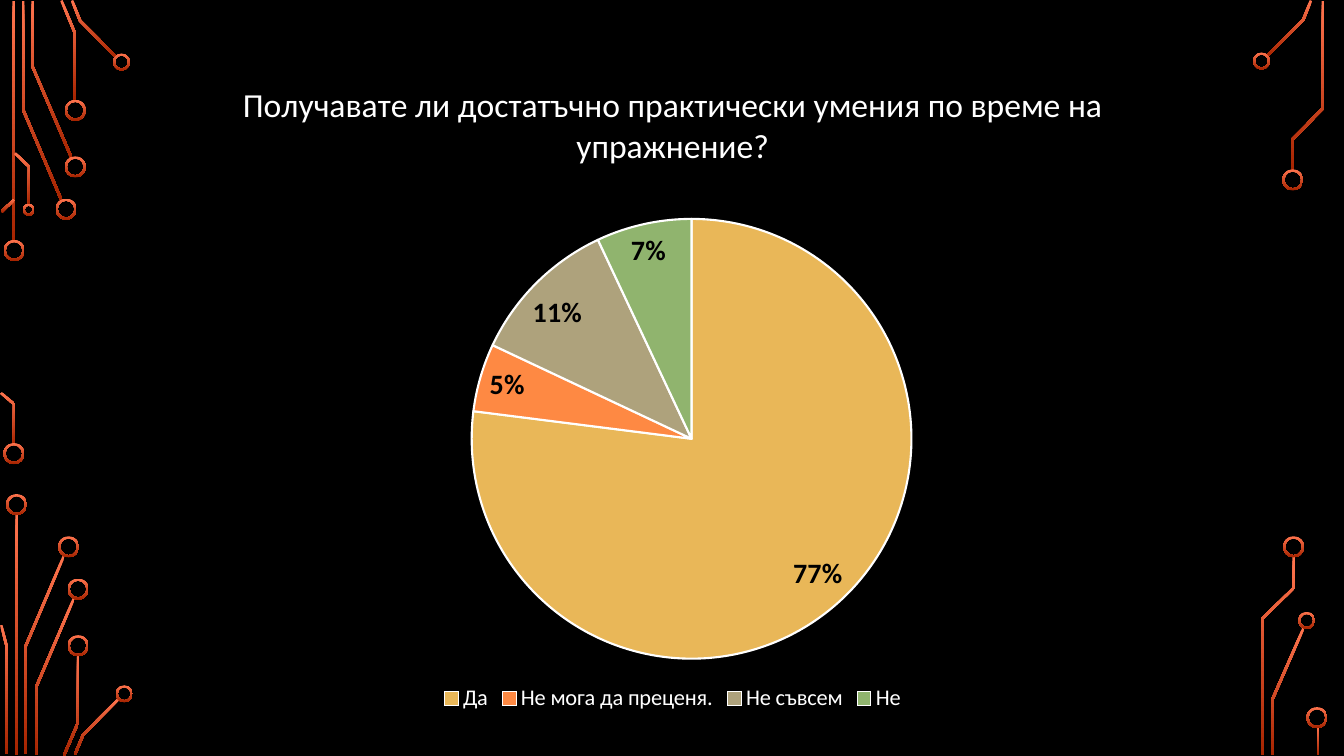
import math

import pptx
import pptx.chart.data
import pptx.dml.color
import pptx.enum.chart
import pptx.enum.shapes
import pptx.util

HUES = {
    "back": "000000", "text": "FFFFFF", "label": "000000",
    "top": "FF744E", "base": "A62400",
    "yes": "E9B758", "unsure": "FE8943", "partly": "AEA27C", "no": "90B46E",
}
FONT = "Calibri"
TITLE = "Получавате ли достатъчно практически умения по време на упражнение?"
VOTES = [("Да", 77, "yes"), ("Не мога да преценя.", 5, "unsure"),
         ("Не съвсем", 11, "partly"), ("Не", 7, "no")]

# Centre lines of the circuit traces, in points
TRACES = [
    # Top left
    [(9.7, 0.7), (9.7, 172.8)],
    [(16.6, 0.7), (16.6, 78.5), (43.9, 142.9)],
    [(23.4, 0.7), (23.4, 47.9), (51.1, 112.7)],
    [(43.9, 0.4), (53.6, 23.8), (53.6, 72)],
    [(51.5, 0.4), (57.2, 14.8), (83.2, 41)],
    [(1.1, 151.2), (10.1, 142.6)],
    [(10.8, 109.4), (20.9, 119.2), (20.9, 146.2)],
    # Bottom left
    [(0.7, 280.7), (10.1, 288.7), (10.1, 317.5)],
    [(11.9, 367.2), (11.9, 539.3)],
    [(45.7, 397.1), (18.4, 461.5), (18.4, 538.6)],
    [(0.9, 446.5), (4.7, 461.5), (4.7, 538.6)],
    [(52.9, 427.3), (25.6, 491.4), (25.6, 539.3)],
    [(55.8, 468), (55.8, 516.2), (45.7, 539.6)],
    [(85, 499), (59.4, 524.9), (53.6, 538.9)],
    # Top right
    [(936.4, 0.4), (931, 14), (905, 40)],
    [(945, 0.7), (945, 77.4), (923, 99.7), (923, 121.7)],
    # Bottom right
    [(924.1, 397.4), (924.1, 420.1), (901.8, 441.7), (901.8, 539.3)],
    [(931, 448.9), (909, 499.3), (909, 539.3)],
    [(941.4, 519.1), (941.4, 539.3)],
]

# Centres of the ring pads by diameter, in points
RINGS = {
    15: [(10.1, 178.9), (9.9, 324), (47.2, 149.4), (53.8, 119.2), (53.8, 78.8),
         (11.8, 360.4), (49, 390.6), (55.8, 420.8), (55.8, 461.2),
         (923.4, 128.5), (924, 390.6), (940.7, 512.6)],
    12.2: [(86.8, 44.3), (88.8, 495.6), (901.1, 43.6), (933.4, 443.2)],
    8.6: [(20.5, 149.8)],
}


def hue(name):
    return pptx.dml.color.RGBColor.from_string(HUES[name])


def edge(line, half):
    """Shift a line sideways by half its width, with mitred corners."""
    norms = []
    for (x1, y1), (x2, y2) in zip(line, line[1:]):
        size = math.hypot(x2 - x1, y2 - y1)
        norms.append(((y1 - y2) / size, (x2 - x1) / size))
    pairs = zip(line, norms[:1] + norms, norms + norms[-1:])
    for (x, y), (ax, ay), (bx, by) in pairs:
        step = half / (1 + ax * bx + ay * by)
        yield x + (ax + bx) * step, y + (ay + by) * step


class Page:
    def __init__(self, deck):
        self.slide = deck.slides.add_slide(deck.slide_layouts[6])
        self.shapes = self.slide.shapes
        self.thick = 1.8
        self.rim = 1.5
        fill = self.slide.background.fill
        fill.solid()
        fill.fore_color.rgb = hue("back")

    def glow(self, shape):
        shape.shadow.inherit = False
        shape.line.fill.background()
        shape.fill.gradient()
        shape.fill.gradient_angle = 270
        for stop, name in zip(shape.fill.gradient_stops, ("top", "base")):
            stop.color.rgb = hue(name)

    def trace(self, line):
        half = self.thick / 2
        rim = list(edge(line, half)) + list(edge(line, -half))[::-1]
        dots = [(pptx.util.Pt(x), pptx.util.Pt(y)) for x, y in rim]
        form = self.shapes.build_freeform(*dots[0], scale=1.0)
        form.add_line_segments(dots[1:], close=True)
        self.glow(form.convert_to_shape())

    def ring(self, x, y, size):
        pad = self.shapes.add_shape(
            pptx.enum.shapes.MSO_SHAPE.DONUT,
            pptx.util.Pt(x - size / 2), pptx.util.Pt(y - size / 2),
            pptx.util.Pt(size), pptx.util.Pt(size))
        pad.adjustments[0] = self.rim / size
        self.glow(pad)

    def style(self, font, size, name="text", bold=False):
        font.name = FONT
        font.size = pptx.util.Pt(size)
        font.bold = bold
        font.color.rgb = hue(name)

    def pie(self, left, top, width, height):
        data = pptx.chart.data.CategoryChartData()
        data.categories = [vote[0] for vote in VOTES]
        data.add_series("Series 1", [vote[1] for vote in VOTES])
        chart = self.shapes.add_chart(
            pptx.enum.chart.XL_CHART_TYPE.PIE,
            pptx.util.Pt(left), pptx.util.Pt(top),
            pptx.util.Pt(width), pptx.util.Pt(height), data).chart
        self.style(chart.font, 10)

        # Title
        chart.has_title = True
        head = chart.chart_title.text_frame
        head.text = TITLE
        self.style(head.paragraphs[0].font, 24)
        chart.chart_title.include_in_layout = False

        # Legend
        chart.has_legend = True
        chart.legend.position = pptx.enum.chart.XL_LEGEND_POSITION.BOTTOM
        chart.legend.include_in_layout = False
        self.style(chart.legend.font, 16)

        # Slices
        plot = chart.plots[0]
        plot.vary_by_categories = True
        for i, vote in enumerate(VOTES):
            form = plot.series[0].points[i].format
            form.fill.solid()
            form.fill.fore_color.rgb = hue(vote[2])
            form.line.color.rgb = hue("text")
            form.line.width = pptx.util.Pt(1.5)

        # Labels
        plot.has_data_labels = True
        labels = plot.data_labels
        labels.show_percentage = True
        labels.show_value = False
        labels.number_format = "0%"
        labels.number_format_is_linked = False
        labels.position = pptx.enum.chart.XL_LABEL_POSITION.BEST_FIT
        self.style(labels.font, 20, "label", True)

        # Plot area, as shares of the chart
        area = chart._chartSpace.chart.plotArea
        old = area.find("{*}layout")
        if old is not None:
            area.remove(old)
        space = "http://schemas.openxmlformats.org/drawingml/2006/chart"
        marks = [("layoutTarget", "inner"), ("xMode", "edge"), ("yMode", "edge"),
                 ("x", 0.34), ("y", 0.245), ("w", 0.35), ("h", 0.667)]
        body = "".join(f'<c:{tag} val="{val}"/>' for tag, val in marks)
        area.insert(0, pptx.oxml.parse_xml(
            f'<c:layout xmlns:c="{space}"><c:manualLayout>{body}'
            '</c:manualLayout></c:layout>'))


def main():
    deck = pptx.Presentation()
    deck.slide_width = pptx.util.Pt(960)
    deck.slide_height = pptx.util.Pt(540)
    page = Page(deck)

    # Circuit frame
    for line in TRACES:
        page.trace(line)
    for size, spots in RINGS.items():
        for x, y in spots:
            page.ring(x, y, size)

    # Survey chart
    page.pie(31, 41, 899, 471)
    deck.save("out.pptx")


if __name__ == "__main__":
    main()
